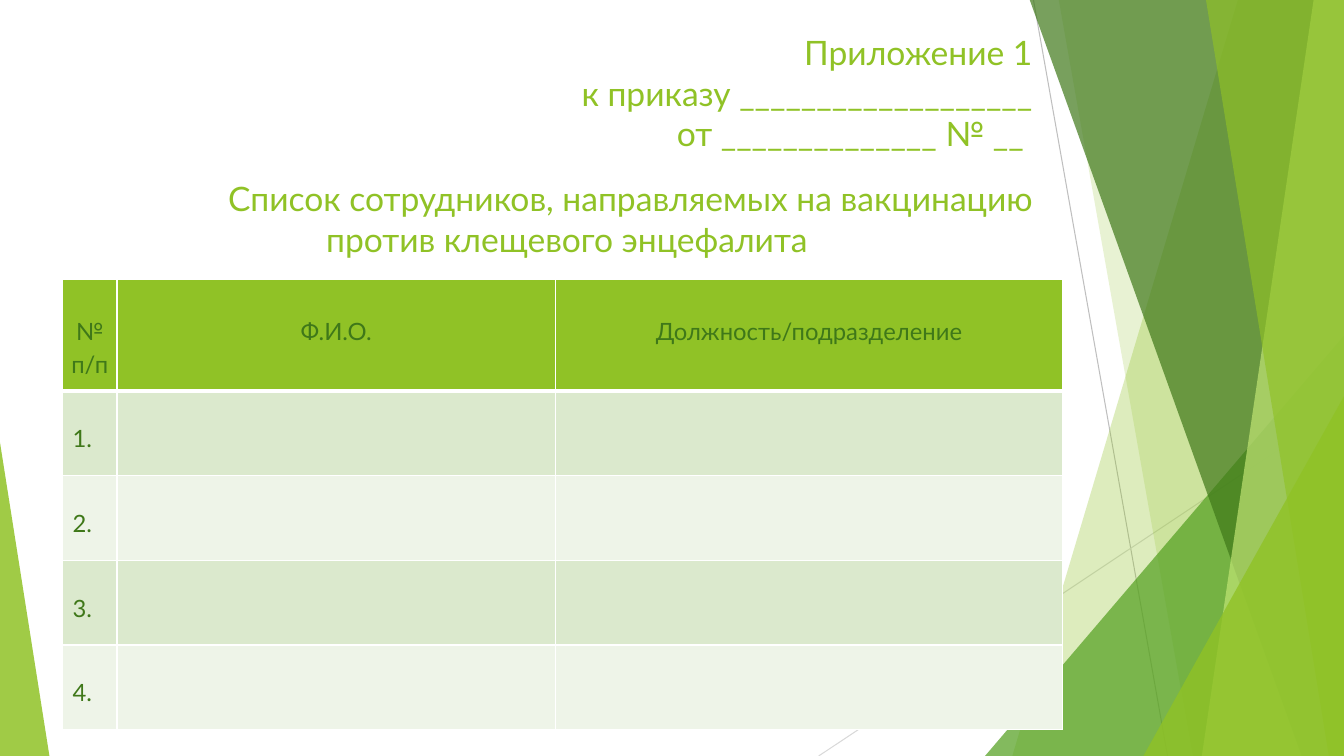
from lxml import etree
from pptx import Presentation
from pptx.dml.color import RGBColor
from pptx.enum.shapes import MSO_CONNECTOR, MSO_SHAPE
from pptx.enum.text import MSO_ANCHOR, PP_ALIGN
from pptx.oxml.ns import qn
from pptx.util import Inches, Pt

LINE, TRIANGLE = MSO_CONNECTOR.STRAIGHT, MSO_SHAPE.ISOSCELES_TRIANGLE
TOP, BOTTOM = MSO_ANCHOR.TOP, MSO_ANCHOR.BOTTOM
LEFT, CENTER, RIGHT = PP_ALIGN.LEFT, PP_ALIGN.CENTER, PP_ALIGN.RIGHT

LIME = RGBColor(0x90, 0xC2, 0x26)
PALE_LIME = RGBColor(0xC0, 0xE4, 0x74)
GREEN = RGBColor(0x54, 0xA0, 0x21)
DARK_GREEN = RGBColor(0x3F, 0x78, 0x19)
BAND_DARK = RGBColor(0xDB, 0xE9, 0xCD)
BAND_LIGHT = RGBColor(0xEE, 0xF4, 0xE8)
GRAY = RGBColor(0xBF, 0xBF, 0xBF)
LIGHT_GRAY = RGBColor(0xD9, 0xD9, 0xD9)
FONT = "Lato"
WIDTH, HEIGHT = 13.33, 7.5


def set_font(p, size, color, align):
    p.alignment = align
    p.font.name = FONT
    p.font.size = Pt(size)
    p.font.color.rgb = color


def paint(shape, color, opacity):
    """Fill a facet with a translucent colour, no outline."""
    shape.shadow.inherit = False
    shape.line.fill.background()
    shape.fill.solid()
    shape.fill.fore_color.rgb = color
    clr = shape.fill._xPr.find(qn("a:solidFill"))[0]
    etree.SubElement(clr, qn("a:alpha"), val=str(opacity * 1000))


def add_line(s, start, end, color):
    line = s.shapes.add_connector(LINE, *map(Inches, start + end))
    line.line.color.rgb = color
    line.line.width = Pt(0.75)
    etree.SubElement(line._element.spPr, qn("a:effectLst"))


def add_facet(s, top_x, bottom_x, color, opacity):
    """Slanted left edge, running to the right edge of the slide."""
    top = -0.01
    points = [(WIDTH, top), (WIDTH, HEIGHT), (bottom_x, HEIGHT)]
    builder = s.shapes.build_freeform(Inches(top_x), Inches(top))
    builder.add_line_segments([(Inches(x), Inches(y)) for x, y in points])
    paint(builder.convert_to_shape(), color, opacity)


def add_triangle(s, left, top, width, apex, color, opacity):
    """Right triangle standing on the bottom of the slide."""
    box = map(Inches, (left, top, width, HEIGHT - top))
    shape = s.shapes.add_shape(TRIANGLE, *box)
    shape.adjustments[0] = apex
    paint(shape, color, opacity)


def add_decoration(s):
    add_line(s, (10.25, 0), (11.58, HEIGHT), GRAY)
    add_line(s, (WIDTH, 4.03), (8.12, HEIGHT), LIGHT_GRAY)
    add_facet(s, 12.28, 10.04, LIME, 30)
    add_facet(s, 10.5, 11.83, LIME, 20)
    add_triangle(s, 9.77, 3.33, 3.56, 1, GREEN, 72)
    add_facet(s, 10.21, 12.91, DARK_GREEN, 70)
    add_facet(s, 13.03, 11.92, PALE_LIME, 70)
    add_facet(s, 11.96, 13.18, LIME, 65)
    add_triangle(s, 11.34, 3.93, 1.99, 1, LIME, 80)
    add_triangle(s, 0, 4.39, 0.49, 0, LIME, 85)


def add_title(s, left, top, width, height):
    title = s.shapes.title
    title.left, title.top = Inches(left), Inches(top)
    title.width, title.height = Inches(width), Inches(height)
    tf = title.text_frame
    tf.word_wrap = True
    tf.vertical_anchor = BOTTOM
    tf.text = "Приложение 1\vк приказу ___________________\vот ______________ № __ "
    tf.paragraphs[0].line_spacing = 1.0
    set_font(tf.paragraphs[0], 24, LIME, RIGHT)


def add_subtitle(s, left, top, width, height):
    box = s.shapes.add_textbox(*map(Inches, (left, top, width, height)))
    tf = box.text_frame
    tf.word_wrap = True
    tf.vertical_anchor = TOP
    tf.text = ("Список сотрудников, направляемых на вакцинацию\n"
               " против клещевого энцефалита")
    for p, align in zip(tf.paragraphs, (RIGHT, CENTER)):
        set_font(p, 24, LIME, align)


def format_cell(cell, fill, bottom_width):
    """White borders first, then the fill, as the schema orders them."""
    tc_pr = cell._tc.get_or_add_tcPr()
    for side, width in (("L", 1), ("R", 1), ("T", 1), ("B", bottom_width)):
        ln = etree.SubElement(tc_pr, qn(f"a:ln{side}"), w=str(Pt(width)))
        solid = etree.SubElement(ln, qn("a:solidFill"))
        etree.SubElement(solid, qn("a:srgbClr"), val="FFFFFF")
    cell.fill.solid()
    cell.fill.fore_color.rgb = fill


def add_staff_table(s, left, top, widths, header_height, row_height, count):
    headers = ["№\nп/п", "Ф.И.О.", "Должность/подразделение"]
    rows = [headers] + [[f"{n}.", "", ""] for n in range(1, count + 1)]
    height = header_height + count * row_height
    frame = s.shapes.add_table(len(rows), len(widths), Inches(left), Inches(top),
                               Inches(sum(widths)), Inches(height))
    table = frame.table
    for column, width in zip(table.columns, widths):
        column.width = Inches(width)
    for i, texts in enumerate(rows):
        is_header = i == 0
        table.rows[i].height = Inches(header_height if is_header else row_height)
        fill = LIME if is_header else (BAND_LIGHT, BAND_DARK)[i % 2]
        for j, text in enumerate(texts):
            cell = table.cell(i, j)
            format_cell(cell, fill, 3 if is_header else 1)
            cell.margin_top = Inches(0.33)
            if is_header:
                cell.margin_left = cell.margin_right = Inches(0.07)
                cell.margin_bottom = 0
            cell.text = text
            for p in cell.text_frame.paragraphs:
                set_font(p, 17, DARK_GREEN, CENTER if is_header else LEFT)
                if is_header:
                    p.line_spacing = 1.15


def main():
    prs = Presentation()
    prs.slide_width, prs.slide_height = Inches(WIDTH), Inches(HEIGHT)
    s = prs.slides.add_slide(prs.slide_layouts[5])
    add_decoration(s)
    add_title(s, 0.82, 0.25, 9.52, 1.32)
    add_staff_table(s, 0.62, 2.77, (0.54, 4.35, 5.03), 1.11, 0.84, 4)
    add_subtitle(s, 0.82, 1.72, 9.52, 0.93)
    prs.save("out.pptx")


if __name__ == "__main__":
    main()
